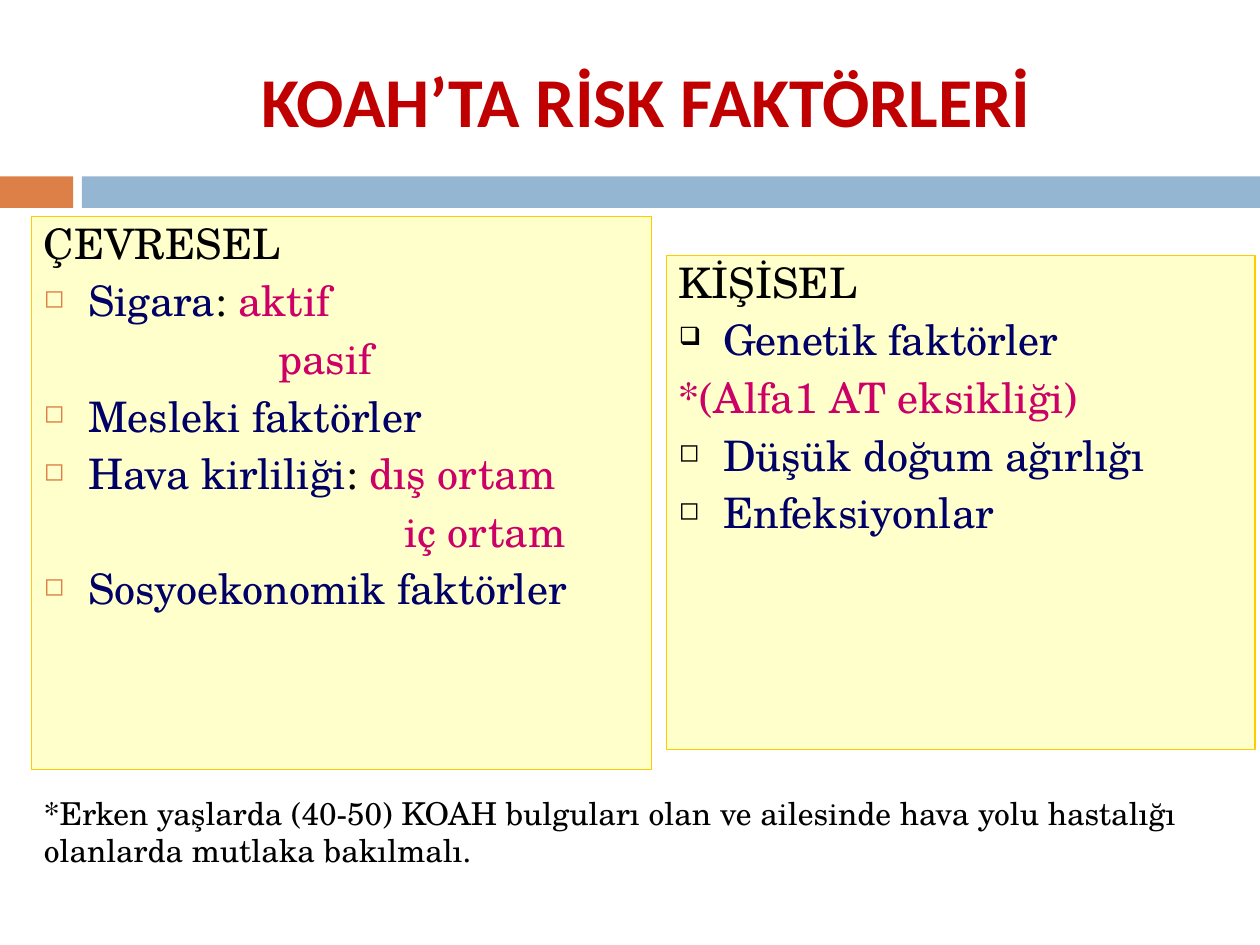
from dataclasses import dataclass

from lxml.etree import SubElement
from pptx import Presentation
from pptx.dml.color import RGBColor
from pptx.enum.shapes import MSO_SHAPE
from pptx.enum.text import MSO_ANCHOR, PP_ALIGN
from pptx.oxml.ns import qn
from pptx.util import Inches, Pt

COLORS = {
    "orange": "DD8047", "blue": "94B6D2", "red": "C00000", "cream": "FFFFCC",
    "gold": "FFCC00", "navy": "000066", "pink": "CC0066", "black": "000000",
}
SERIF = "TeX Gyre Schola"
HANG = 0.35


@dataclass
class Box:
    left: float
    top: float
    width: float
    height: float

    def lengths(self) -> list:
        return [Inches(n) for n in (self.left, self.top, self.width, self.height)]


@dataclass
class Line:
    runs: list[tuple[str, str]]
    bullet: str = ""
    indent: float = 0


@dataclass
class Panel:
    box: Box
    mark: str
    lines: list[Line]


BARS = [(Box(0, 1.4, 0.58, 0.25), "orange"), (Box(0.65, 1.4, 9.35, 0.25), "blue")]

PANELS = [
    Panel(Box(0.25, 1.72, 4.92, 4.39), "orange", [
        Line([("ÇEVRESEL", "black")]),
        Line([("Sigara", "navy"), (": ", "black"), ("aktif", "pink")], "◻"),
        Line([("pasif", "pink")], indent=1.86),
        Line([("Mesleki faktörler", "navy")], "◻"),
        Line([("Hava kirliliği", "navy"), (": ", "black"), ("dış ortam", "pink")], "◻"),
        Line([("iç ortam", "pink")], indent=2.86),
        Line([("Sosyoekonomik faktörler", "navy")], "◻"),
    ]),
    Panel(Box(5.29, 2.03, 4.67, 3.92), "black", [
        Line([("KİŞİSEL", "black")]),
        Line([("Genetik faktörler", "navy")], "❑"),
        Line([("*(Alfa1 AT eksikliği)", "pink")]),
        Line([("Düşük doğum ağırlığı", "navy")], "◻"),
        Line([("Enfeksiyonlar", "navy")], "◻"),
    ]),
]


def rgb(name: str) -> RGBColor:
    return RGBColor.from_string(COLORS[name])


def add_run(para, text: str, color: str, **font) -> None:
    run = para.add_run()
    run.text = text
    run.font.color.rgb = rgb(color)
    for key, value in font.items():
        setattr(run.font, key, value)


def add_box(slide, box: Box):
    shape = slide.shapes.add_textbox(*box.lengths())
    shape.text_frame.word_wrap = True
    return shape


def add_bar(slide, box: Box, color: str) -> None:
    bar = slide.shapes.add_shape(MSO_SHAPE.RECTANGLE, *box.lengths())
    bar.shadow.inherit = False
    bar.fill.solid()
    bar.fill.fore_color.rgb = rgb(color)
    bar.line.fill.background()


def set_bullet(para, char: str, color: str) -> None:
    """Hang the paragraph behind a small coloured bullet."""
    props = para._p.get_or_add_pPr()
    props.set("marL", str(Inches(HANG)))
    props.set("indent", str(-Inches(HANG)))
    tint = SubElement(props, qn("a:buClr"))
    SubElement(tint, qn("a:srgbClr"), val=COLORS[color])
    SubElement(props, qn("a:buSzPct"), val="60000")
    SubElement(props, qn("a:buChar"), char=char)


def add_panel(slide, panel: Panel) -> None:
    shape = add_box(slide, panel.box)
    shape.fill.solid()
    shape.fill.fore_color.rgb = rgb("cream")
    shape.line.color.rgb = rgb("gold")
    shape.line.width = Pt(0.75)
    frame = shape.text_frame
    for i, line in enumerate(panel.lines):
        para = frame.add_paragraph() if i else frame.paragraphs[0]
        for key, value in {"line_spacing": 0.9, "space_before": Pt(7)}.items():
            setattr(para, key, value)
        if line.bullet:
            set_bullet(para, line.bullet, panel.mark)
        elif line.indent:
            para._p.get_or_add_pPr().set("marL", str(Inches(line.indent)))
        for text, color in line.runs:
            add_run(para, text, color, name=SERIF, size=Pt(24))


def main() -> None:
    deck = Presentation()
    deck.slide_width, deck.slide_height = Inches(10), Inches(7.5)
    slide = deck.slides.add_slide(deck.slide_layouts[6])

    for box, color in BARS:
        add_bar(slide, box, color)

    title = add_box(slide, Box(0.67, 0.25, 8.92, 1.08)).text_frame
    title.vertical_anchor = MSO_ANCHOR.MIDDLE
    head = title.paragraphs[0]
    head.alignment = PP_ALIGN.CENTER
    add_run(head, "KOAH’TA RİSK FAKTÖRLERİ", "red", name="Calibri", size=Pt(40), bold=True)

    for panel in PANELS:
        add_panel(slide, panel)

    note = add_box(slide, Box(0.25, 6.25, 9.75, 0.9)).text_frame.paragraphs[0]
    add_run(note, "*Erken yaşlarda (40-50) KOAH bulguları olan ve ailesinde hava yolu "
            "hastalığı olanlarda mutlaka bakılmalı.", "black", name=SERIF, size=Pt(18))

    deck.save("out.pptx")


if __name__ == "__main__":
    main()
